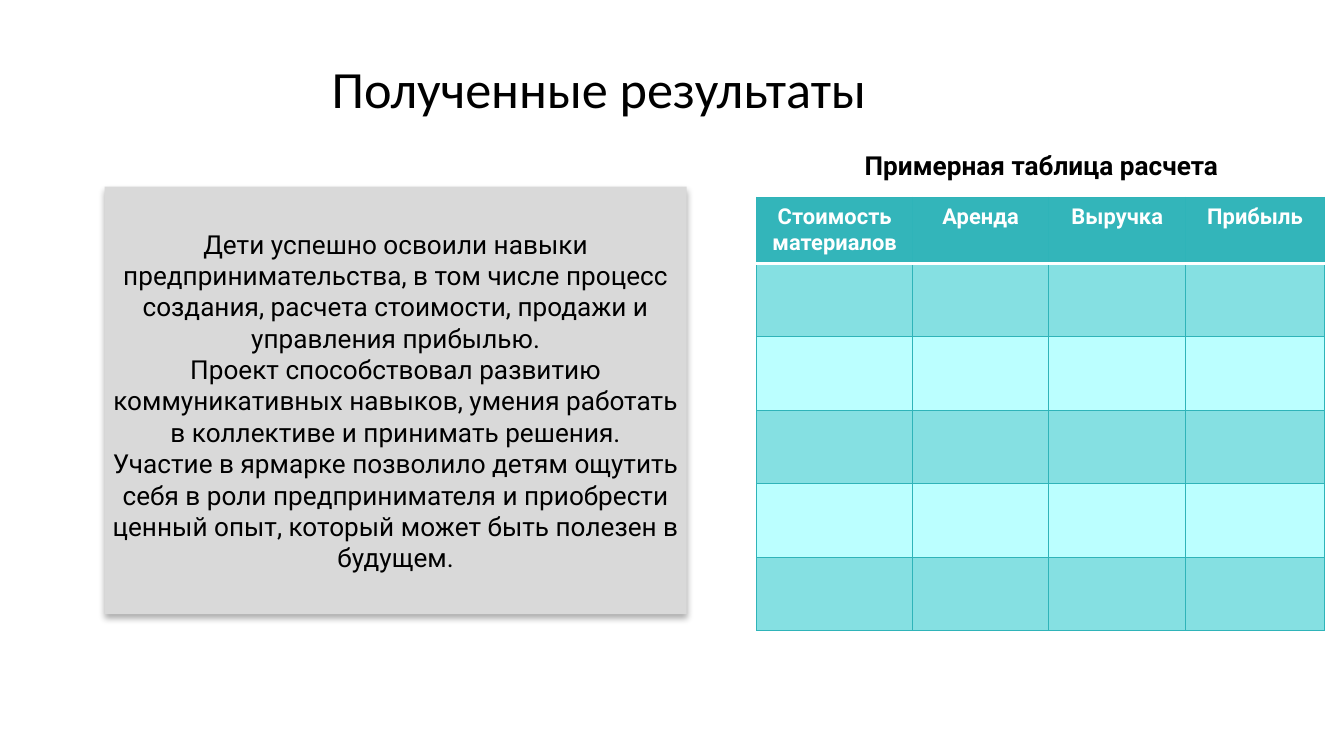
import dataclasses

import lxml.etree
import pptx
import pptx.dml.color
import pptx.enum.shapes
import pptx.enum.text
import pptx.oxml
import pptx.oxml.ns
import pptx.util

Cm = pptx.util.Cm
Pt = pptx.util.Pt
ANCHOR = pptx.enum.text.MSO_ANCHOR
CENTER = pptx.enum.text.PP_ALIGN.CENTER


@dataclasses.dataclass(frozen=True)
class Theme:
    text: str = "000000"
    white: str = "FFFFFF"
    panel: str = "D9D9D9"
    header: str = "33B5BA"
    band: str = "85E0E2"
    plain: str = "BBFFFF"
    border: str = "2FB4B9"
    title_size: float = 28
    body_size: float = 14
    header_size: float = 11.7


theme = Theme()


def write(tf, lines, color=theme.text, margin=None, anchor=None, **font):
    frame = {"word_wrap": True, "vertical_anchor": anchor}
    if margin is not None:
        for side in ("left", "top", "right", "bottom"):
            frame[f"margin_{side}"] = Cm(margin)
    for name, value in frame.items():
        setattr(tf, name, value)
    for i, line in enumerate(lines):
        p = tf.add_paragraph() if i else tf.paragraphs[0]
        p.alignment = CENTER
        r = p.add_run()
        r.text = line
        for name, value in font.items():
            setattr(r.font, name, value)
        r.font.color.rgb = pptx.dml.color.RGBColor.from_string(color)


def add_border(cell, side, color, width):
    tc_pr = cell._tc.get_or_add_tcPr()
    tc_pr.append(pptx.oxml.parse_xml(
        f'<a:ln{side} {pptx.oxml.ns.nsdecls("a")} w="{Pt(width)}">'
        f'<a:solidFill><a:srgbClr val="{color}"/></a:solidFill></a:ln{side}>'
    ))


prs = pptx.Presentation()
prs.slide_width = Cm(25.4)
prs.slide_height = Cm(14.29)
s = prs.slides.add_slide(prs.slide_layouts[6])

title = s.shapes.add_textbox(Cm(1.75), Cm(1.07), Cm(19.13), Cm(1.9))
write(title.text_frame, ["Полученные результаты"], margin=0, anchor=ANCHOR.TOP,
      name="Calibri", size=Pt(theme.title_size))

results = [
    "Дети успешно освоили навыки предпринимательства, в том числе процесс создания, "
    "расчета стоимости, продажи и управления прибылью.",
    "Проект способствовал развитию коммуникативных навыков, умения работать в "
    "коллективе и принимать решения.",
    "Участие в ярмарке позволило детям ощутить себя в роли предпринимателя и "
    "приобрести ценный опыт, который может быть полезен в будущем.",
]
sp = s.shapes.add_shape(pptx.enum.shapes.MSO_SHAPE.RECTANGLE,
                        Cm(1.98), Cm(3.53), Cm(11), Cm(8.08))
sp.shadow.inherit = False
sp.fill.solid()
sp.fill.fore_color.rgb = pptx.dml.color.RGBColor.from_string(theme.panel)
sp.line.fill.background()
effects = sp._element.spPr.find(pptx.oxml.ns.qn("a:effectLst"))
shadow = lxml.etree.SubElement(effects, pptx.oxml.ns.qn("a:outerShdw"),
                               blurRad=str(Pt(3.5)), dist=str(Pt(2.2)),
                               dir="5400000", algn="t", rotWithShape="0")
tint = lxml.etree.SubElement(shadow, pptx.oxml.ns.qn("a:srgbClr"), val=theme.text)
lxml.etree.SubElement(tint, pptx.oxml.ns.qn("a:alpha"), val="32000")
write(sp.text_frame, results, margin=0.14, anchor=ANCHOR.MIDDLE,
      name="Roboto", size=Pt(theme.body_size))

headers = ["Стоимость материалов", "Аренда", "Выручка", "Прибыль"]
col_widths = [2.95, 2.57, 2.59, 2.62]
row_heights = [1.24] + [1.39] * 5
table = s.shapes.add_table(len(row_heights), len(headers), Cm(14.3), Cm(3.73),
                           Cm(sum(col_widths)), Cm(sum(row_heights))).table
for col, width in zip(table.columns, col_widths):
    col.width = Cm(width)
for i, (row, height) in enumerate(zip(table.rows, row_heights)):
    row.height = Cm(height)
    fill = theme.header if i == 0 else theme.band if i % 2 else theme.plain
    for cell in row.cells:
        for side in "LRTB":
            divider = (i, side) in ((0, "B"), (1, "T"))
            add_border(cell, side, theme.white if divider else theme.border,
                       2 if divider else 0.75)
        cell.fill.solid()
        cell.fill.fore_color.rgb = pptx.dml.color.RGBColor.from_string(fill)
for cell, header in zip(table.rows[0].cells, headers):
    write(cell.text_frame, [header], theme.white,
          name="Roboto", size=Pt(theme.header_size), bold=True)

caption = s.shapes.add_textbox(Cm(15.06), Cm(2.67), Cm(9.25), Cm(0.89))
write(caption.text_frame, ["Примерная таблица расчета"], margin=0.15,
      anchor=ANCHOR.MIDDLE, name="Roboto", size=Pt(theme.body_size), bold=True)

prs.save("out.pptx")
